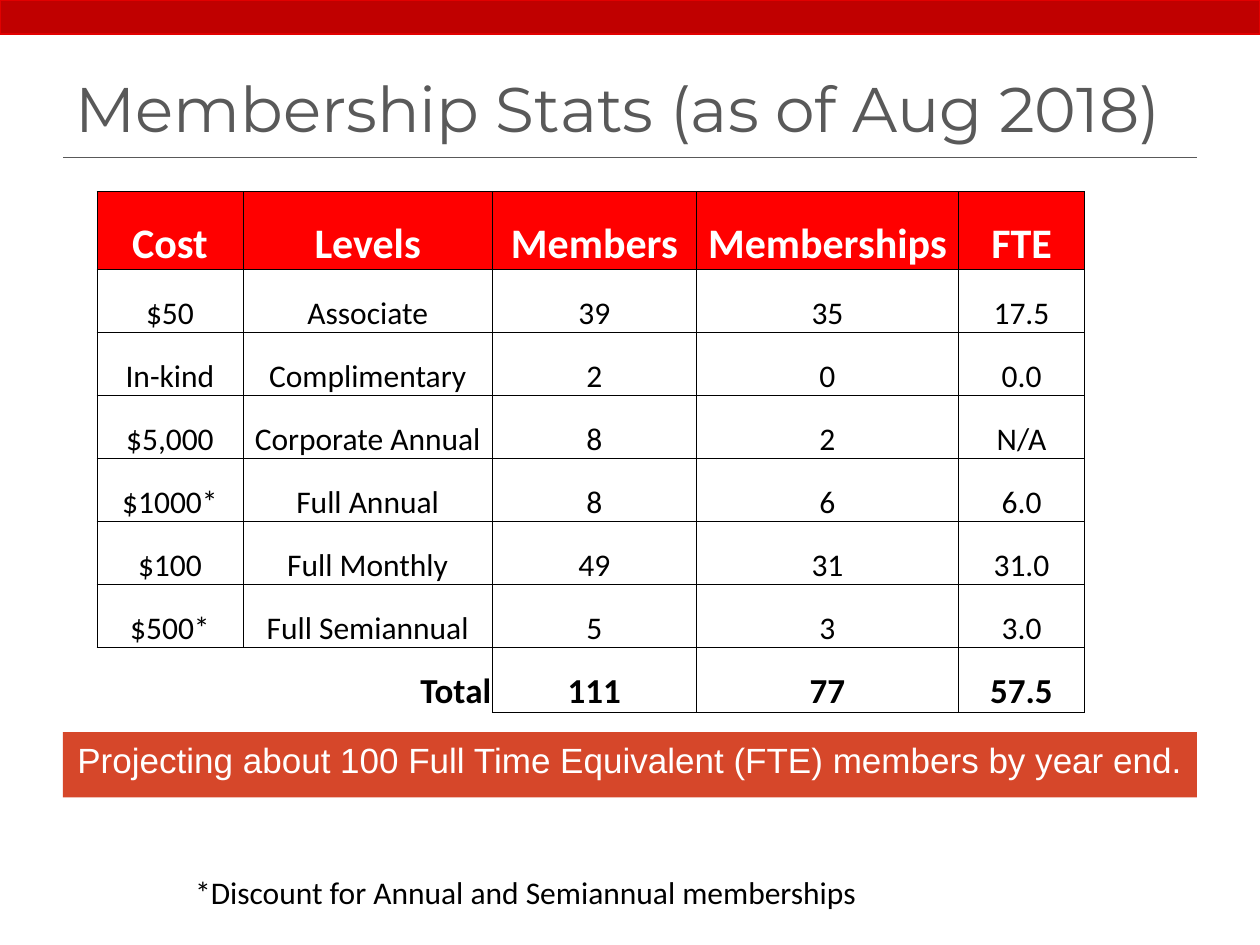
from lxml.etree import SubElement as Sub
from pptx import Presentation
from pptx.dml.color import RGBColor as Rgb
from pptx.enum.shapes import MSO_CONNECTOR as Conn, MSO_SHAPE as Kind
from pptx.enum.text import MSO_ANCHOR as Anchor, MSO_AUTO_SIZE as Auto, PP_ALIGN as Align
from pptx.oxml.ns import qn
from pptx.util import Pt

ROWS = [
    ("Cost", "Levels", "Members", "Memberships", "FTE"),
    ("$50", "Associate", "39", "35", "17.5"),
    ("In-kind", "Complimentary", "2", "0", "0.0"),
    ("$5,000", "Corporate Annual", "8", "2", "N/A"),
    ("$1000*", "Full Annual", "8", "6", "6.0"),
    ("$100", "Full Monthly", "49", "31", "31.0"),
    ("$500*", "Full Semiannual", "5", "3", "3.0"),
    ("", "Total", "111", "77", "57.5"),
]
WIDTHS = (83.5, 142.5, 116.6, 149.8, 72)
HEIGHTS = (44.6, *[36] * 6, 37.4)
HEAD = {"size": Pt(24), "bold": True, "name": "Calibri"}
BODY = {"size": Pt(18), "bold": False, "name": "Calibri"}
TOTAL = {"size": Pt(20), "bold": True, "name": "Calibri"}
PAD = {"margin_left": Pt(0.72), "margin_right": Pt(0.72), "margin_top": Pt(0.72),
       "margin_bottom": Pt(0), "vertical_anchor": Anchor.BOTTOM}


def hue(code):
    return Rgb.from_string(code)


def apply(obj, form):
    for key, val in form.items():
        setattr(obj, key, val)


def write(frame, text, form, color, align=Align.LEFT):
    para = frame.paragraphs[0]
    para.alignment = align
    run = para.add_run()
    run.text = text
    apply(run.font, form)
    run.font.color.rgb = hue(color)


def block(slide, box, fill, line=None):
    shape = slide.shapes.add_shape(Kind.RECTANGLE, *map(Pt, box))
    shape.shadow.inherit = False
    shape.fill.solid()
    shape.fill.fore_color.rgb = hue(fill)
    if line:
        shape.line.color.rgb = hue(line)
        shape.line.width = Pt(0.75)
    else:
        shape.line.fill.background()
    return shape


def title(slide, box, text):
    left, top, width, height = box
    base = top + height
    rule = slide.shapes.add_connector(
        Conn.STRAIGHT, Pt(left), Pt(base), Pt(left + width), Pt(base))
    rule.line.color.rgb = hue("595959")
    rule.line.width = Pt(0.75)
    Sub(rule._element.spPr, qn("a:effectLst"))
    frame = slide.shapes.add_textbox(*map(Pt, box)).text_frame
    apply(frame, {"word_wrap": True, "vertical_anchor": Anchor.BOTTOM,
                  "margin_left": Pt(7.2), "margin_right": Pt(7.2),
                  "margin_top": Pt(7.2), "margin_bottom": Pt(7.2)})
    write(frame, text, {"size": Pt(36), "name": "Montserrat"}, "595959")


def banner(slide, box, text):
    frame = block(slide, box, "D6472A").text_frame
    apply(frame, {"word_wrap": True, "vertical_anchor": Anchor.TOP})
    write(frame, text, {"size": Pt(20), "name": "Arial"}, "FFFFFF", Align.CENTER)


def note(slide, box, text):
    frame = slide.shapes.add_textbox(*map(Pt, box)).text_frame
    apply(frame, {"word_wrap": False, "auto_size": Auto.SHAPE_TO_FIT_TEXT})
    write(frame, text, BODY, "000000")


def border(cell, sides):
    props = cell._tc.get_or_add_tcPr()
    for side in "LRTB":
        line = Sub(props, qn(f"a:ln{side}"), w=str(Pt(0.5)))
        if side in sides:
            fill = Sub(line, qn("a:solidFill"))
            Sub(fill, qn("a:srgbClr"), val="000000")
        else:
            Sub(line, qn("a:noFill"))


def stats(slide, box):
    table = slide.shapes.add_table(len(ROWS), len(WIDTHS), *map(Pt, box)).table
    apply(table, {"first_row": False, "horz_banding": False})
    for col, width in zip(table.columns, WIDTHS):
        col.width = Pt(width)
    last = len(ROWS) - 1
    for r, (row, height) in enumerate(zip(ROWS, HEIGHTS)):
        table.rows[r].height = Pt(height)
        form = {0: HEAD, last: TOTAL}.get(r, BODY)
        for c, text in enumerate(row):
            cell = table.cell(r, c)
            apply(cell, PAD)
            border(cell, {0: "T", 1: "TR"}.get(c, "LRTB") if r == last else "LRTB")
            if r == 0:
                cell.fill.solid()
                cell.fill.fore_color.rgb = hue("FF0000")
            else:
                cell.fill.background()
            if text:
                align = Align.RIGHT if text == "Total" else Align.CENTER
                write(cell.text_frame, text, form, "000000" if r else "FFFFFF", align)


def main():
    deck = Presentation()
    apply(deck, {"slide_width": Pt(720), "slide_height": Pt(540)})
    slide = deck.slides.add_slide(deck.slide_layouts[6])
    block(slide, (0, 0, 720, 19.5), "C00000", "E20000")
    title(slide, (36, 24.5, 648, 65.5), "Membership Stats (as of Aug 2018)")
    banner(slide, (36, 418.3, 648, 37.4),
           "Projecting about 100 Full Time Equivalent (FTE) members by year end.")
    note(slide, (104.4, 495.4, 395.3, 29),
         "*Discount for Annual and Semiannual memberships")
    stats(slide, (55.4, 109.4, sum(WIDTHS), sum(HEIGHTS)))
    deck.save("out.pptx")


if __name__ == "__main__":
    main()
